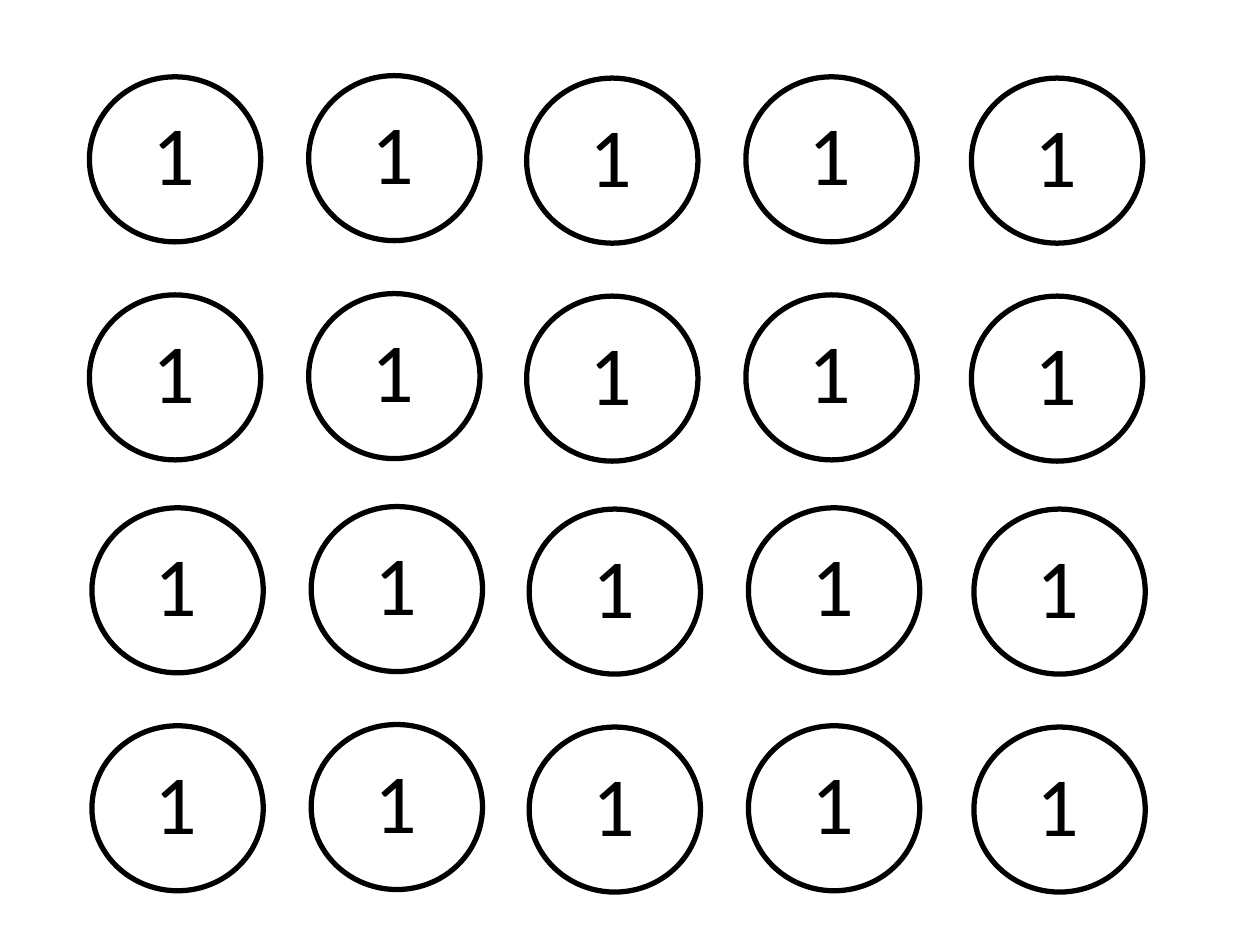
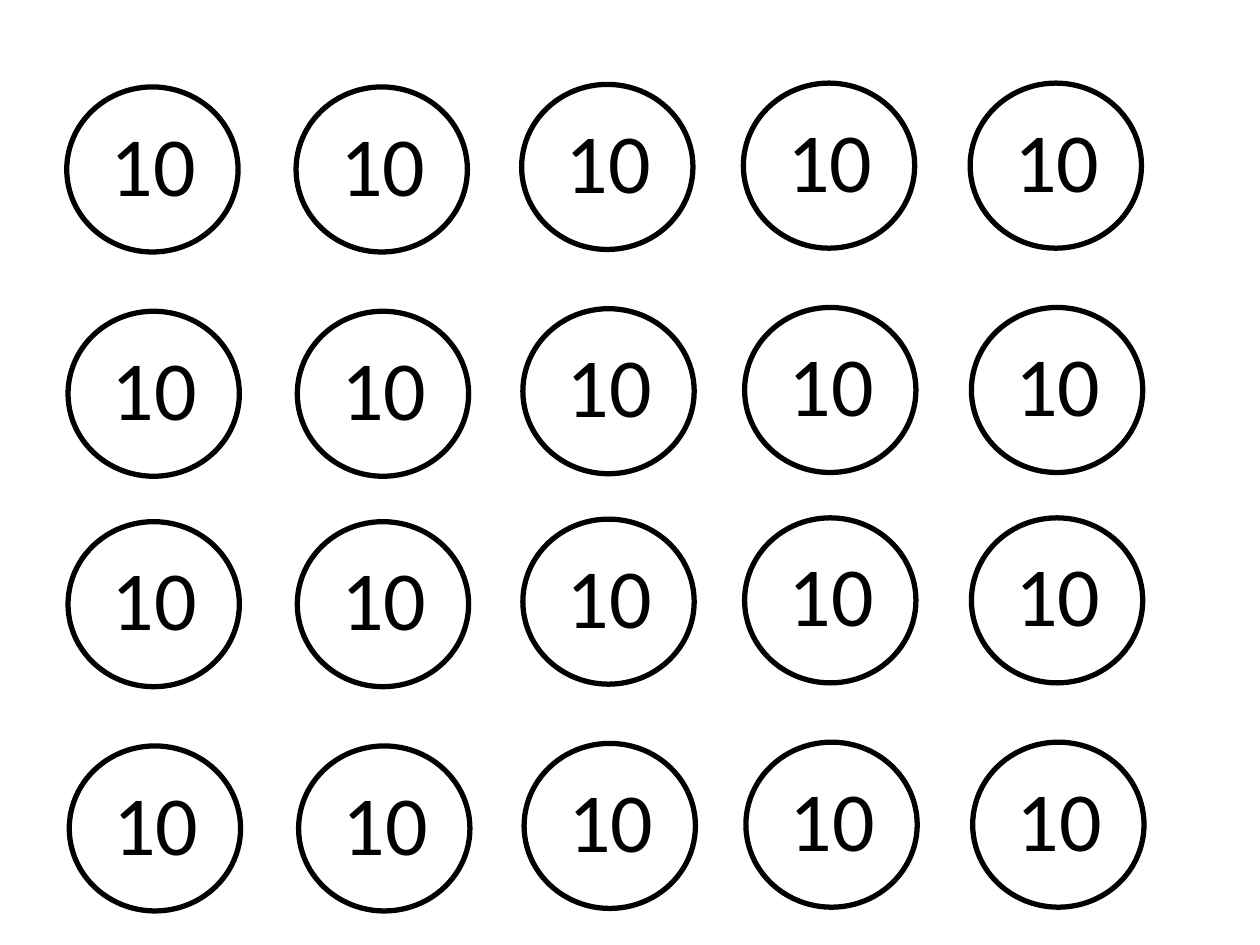
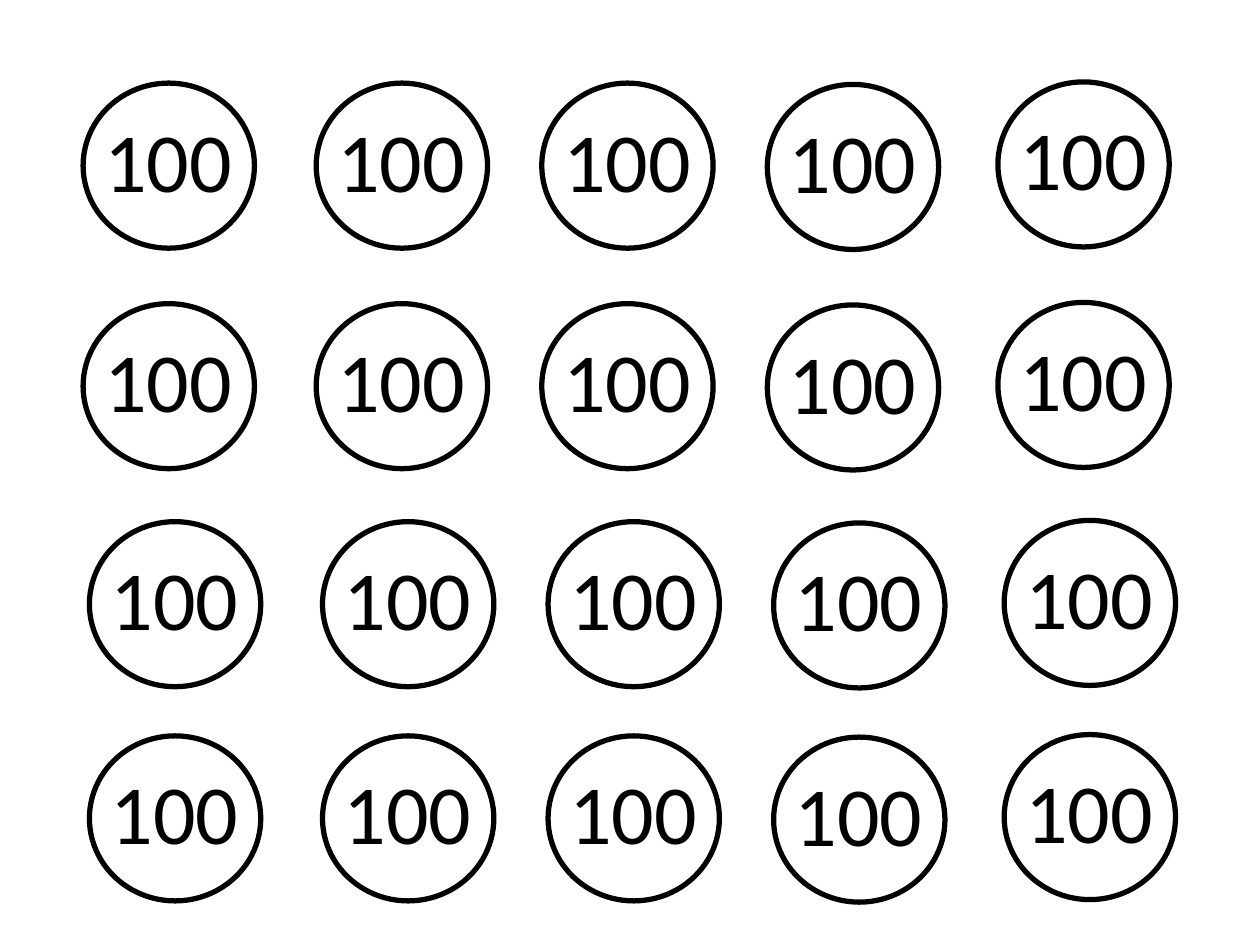
"""Build three pages of round place-value counters: ones, tens and hundreds."""
from itertools import product

from pptx import Presentation
from pptx.dml.color import RGBColor
from pptx.enum.shapes import MSO_SHAPE
from pptx.enum.text import MSO_AUTO_SIZE
from pptx.util import Inches, Pt

COLOURS = {"ink": "000000", "paper": "FFFFFF"}
FONT = "Calibri"
COUNTER_WIDTH, COUNTER_HEIGHT = 1.36, 1.31
LABEL_WIDTH, LABEL_HEIGHT = 1.62, 0.91
LABEL_DROP = 0.15

# Columns are (left, drop below the row top); rows are (top, shift to the right).
COUNTER_PAGES = [
    {
        "value": "1",
        "indent": 0.4,
        "columns": [(0.71, 0.01), (2.45, 0), (4.18, 0.02), (5.92, 0.01), (7.71, 0.02)],
        "rows": [(0.6, 0), (2.33, 0), (4.02, 0.02), (5.75, 0.02)],
    },
    {
        "value": "10",
        "indent": 0.25,
        "columns": [(0.53, 0.03), (2.35, 0.03), (4.14, 0.01), (5.9, 0), (7.7, 0)],
        "rows": [(0.66, 0), (2.44, 0.01), (4.11, 0.01), (5.89, 0.02)],
    },
    {
        "value": "100",
        "indent": 0.07,
        "columns": [(0.66, 0.01), (2.51, 0.01), (4.3, 0.01), (6.09, 0.02), (7.92, 0)],
        "rows": [(5.83, 0.05), (4.13, 0.05), (2.4, 0), (0.65, 0)],
    },
]


def colour(name):
    """Return the named colour."""
    return RGBColor.from_string(COLOURS[name])


def add_ring(group, left, top):
    """Draw the outline of a counter."""
    ring = group.shapes.add_shape(
        MSO_SHAPE.OVAL, Inches(left), Inches(top),
        Inches(COUNTER_WIDTH), Inches(COUNTER_HEIGHT))
    ring.shadow.inherit = False
    ring.fill.background()
    ring.line.color.rgb = colour("ink")
    ring.line.width = Pt(3)


def add_label(group, left, top, value):
    """Write the value of a counter."""
    box = group.shapes.add_textbox(
        Inches(left), Inches(top), Inches(LABEL_WIDTH), Inches(LABEL_HEIGHT))
    box.text_frame.word_wrap = True
    box.text_frame.auto_size = MSO_AUTO_SIZE.SHAPE_TO_FIT_TEXT
    span = box.text_frame.paragraphs[0].add_run()
    span.text = value
    span.font.name = FONT
    span.font.size = Pt(48)
    span.font.color.rgb = colour("ink")


def add_counter(page, left, top, value, indent):
    """Group a ring and its value into one counter."""
    group = page.shapes.add_group_shape()
    add_ring(group, left, top)
    add_label(group, left + indent, top + LABEL_DROP, value)


def add_counter_page(deck, value, indent, columns, rows):
    """Add a page filled with counters of one value."""
    page = deck.slides.add_slide(deck.slide_layouts[6])
    page.background.fill.solid()
    page.background.fill.fore_color.rgb = colour("paper")
    for (top, shift), (left, drop) in product(rows, columns):
        add_counter(page, left + shift, top + drop, value, indent)


def main():
    """Build and save the deck."""
    deck = Presentation()
    deck.slide_width, deck.slide_height = Inches(10), Inches(7.5)
    for counter_page in COUNTER_PAGES:
        add_counter_page(deck, **counter_page)
    deck.save("out.pptx")


if __name__ == "__main__":
    main()
